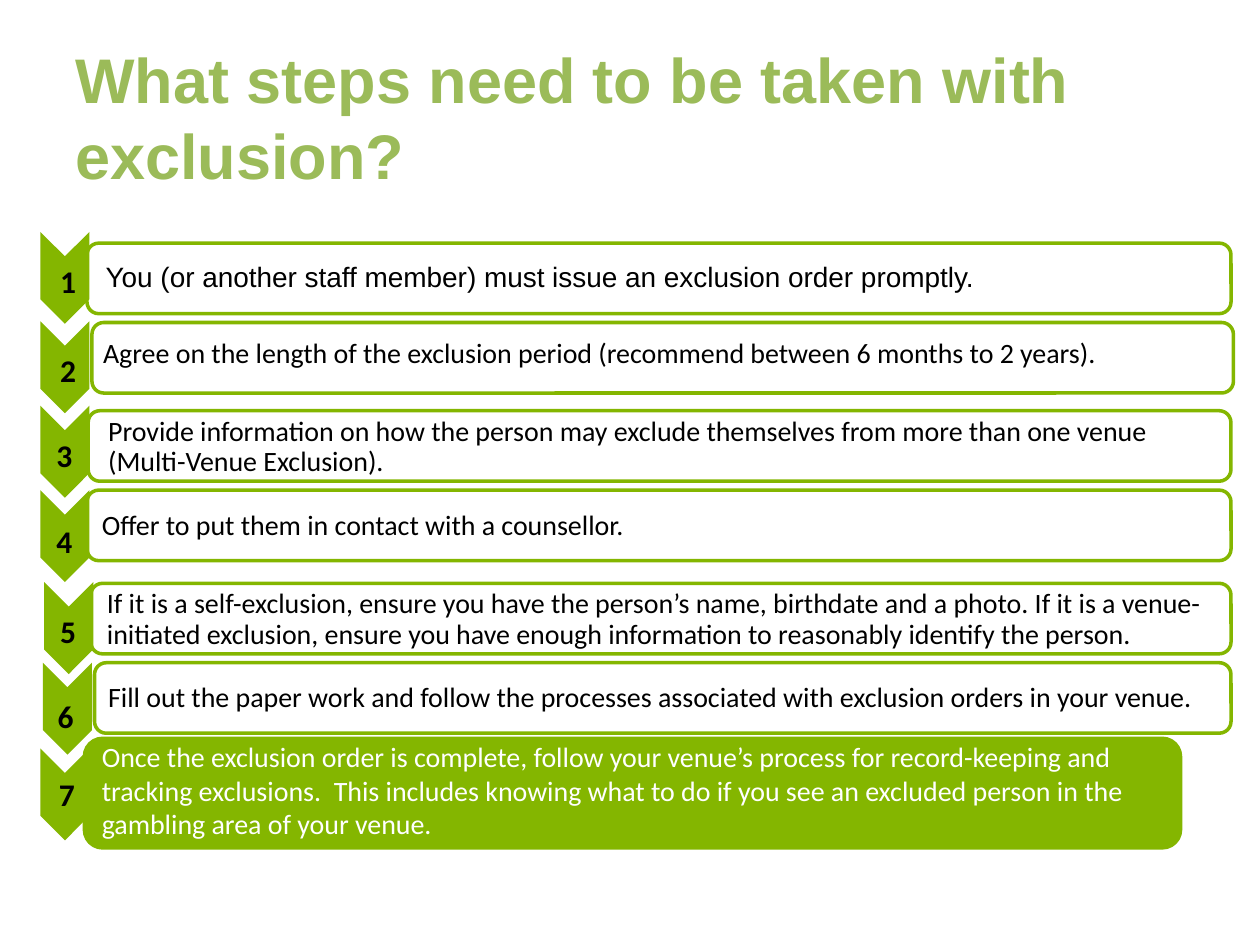
from dataclasses import dataclass

from pptx import Presentation
from pptx.dml.color import RGBColor
from pptx.enum.shapes import MSO_SHAPE
from pptx.enum.text import MSO_ANCHOR
from pptx.util import Inches, Pt

GREEN = RGBColor(0x84, 0xB6, 0x00)
OLIVE = RGBColor(0x9B, 0xBB, 0x59)
BLACK = RGBColor(0x00, 0x00, 0x00)
WHITE = RGBColor(0xFF, 0xFF, 0xFF)


@dataclass(frozen=True)
class Area:
    left: float
    top: float
    width: float
    height: float

    def lengths(self) -> list:
        return [Inches(n) for n in (self.left, self.top, self.width, self.height)]


@dataclass(frozen=True)
class Step:
    words: str
    frame: Area
    label: Area
    arrow: tuple[float, float]
    digit: tuple[float, float]
    font: str = "Calibri"
    final: bool = False


STEPS = [
    Step("You (or another staff member) must issue an exclusion order promptly.",
         Area(0.69, 1.93, 9.08, 0.56), Area(0.74, 1.9, 8.62, 0.62),
         (0.15, 2.01), (0.38, 2.03), font="Arial"),
    Step("Agree on the length of the exclusion period "
         "(recommend between 6 months to 2 years).",
         Area(0.73, 2.56, 9.06, 0.56), Area(0.72, 2.5, 8.62, 0.62),
         (0.15, 2.72), (0.38, 2.74)),
    Step("Provide information on how the person may exclude themselves "
         "from more than one venue \v(Multi-Venue Exclusion).",
         Area(0.7, 3.26, 9.07, 0.56), Area(0.76, 3.24, 8.62, 0.62),
         (0.15, 3.39), (0.35, 3.41)),
    Step("Offer to put them in contact with a counsellor.",
         Area(0.69, 3.89, 9.08, 0.56), Area(0.71, 3.87, 8.62, 0.62),
         (0.15, 4.06), (0.35, 4.09)),
    Step("If it is a self-exclusion, ensure you have the person’s name, birthdate "
         "and a photo. If it is a venue-initiated exclusion, ensure you have "
         "enough information to reasonably identify the person.",
         Area(0.72, 4.63, 9.05, 0.56), Area(0.75, 4.61, 9.02, 0.62),
         (0.18, 4.79), (0.38, 4.81)),
    Step("Fill out the paper work and follow the processes associated "
         "with exclusion orders in your venue.",
         Area(0.75, 5.26, 9.02, 0.56), Area(0.76, 5.23, 9.01, 0.62),
         (0.17, 5.43), (0.36, 5.48)),
    Step("Once the exclusion order is complete, follow your venue’s process for "
         "record-keeping and tracking exclusions.  This includes knowing what to "
         "do if you see an excluded person in the gambling area of your venue.",
         Area(0.67, 5.86, 8.7, 0.87), Area(0.71, 5.82, 8.62, 1.01),
         (0.15, 6.11), (0.37, 6.1), final=True),
]


def add_text(slide, words: str, area: Area, size: int, color: RGBColor,
             font: str = "Calibri", bold: bool = False,
             anchor=MSO_ANCHOR.TOP, pitch: float = 1.0) -> None:
    frame = slide.shapes.add_textbox(*area.lengths()).text_frame
    frame.word_wrap = True
    frame.vertical_anchor = anchor
    frame.text = words
    line = frame.paragraphs[0]
    line.line_spacing = pitch
    for run in line.runs:
        run.font.name = font
        run.font.size = Pt(size)
        run.font.bold = bold
        run.font.color.rgb = color


def add_frame(slide, step: Step) -> None:
    shape = slide.shapes.add_shape(MSO_SHAPE.ROUNDED_RECTANGLE, *step.frame.lengths())
    shape.shadow.inherit = False
    shape.line.color.rgb = GREEN
    shape.line.width = Pt(2)
    if step.final:
        shape.fill.solid()
        shape.fill.fore_color.rgb = GREEN
    else:
        shape.fill.background()


def add_label(slide, step: Step) -> None:
    if step.final:
        add_text(slide, step.words, step.label, 16, WHITE, step.font)
    else:
        add_text(slide, step.words, step.label, 16, BLACK, step.font,
                 anchor=MSO_ANCHOR.MIDDLE, pitch=0.9)


def add_arrow(slide, step: Step) -> None:
    area = Area(*step.arrow, 0.73, 0.39)
    shape = slide.shapes.add_shape(MSO_SHAPE.CHEVRON, *area.lengths())
    shape.rotation = 90
    shape.shadow.inherit = False
    shape.fill.solid()
    shape.fill.fore_color.rgb = GREEN
    shape.line.fill.background()


def main() -> None:
    deck = Presentation()
    deck.slide_width = Inches(10)
    deck.slide_height = Inches(7.5)
    slide = deck.slides.add_slide(deck.slide_layouts[6])
    for step in STEPS:
        add_frame(slide, step)
    add_text(slide, "What steps need to be taken with exclusion?",
             Area(0.5, 0.3, 9, 1.25), 36, OLIVE, "Arial", True, MSO_ANCHOR.MIDDLE)
    for step in STEPS:
        add_label(slide, step)
    for count, step in enumerate(STEPS, 1):
        add_arrow(slide, step)
        add_text(slide, str(count), Area(*step.digit, 0.33, 0.4), 18, BLACK, bold=True)
    deck.save("out.pptx")


if __name__ == "__main__":
    main()
